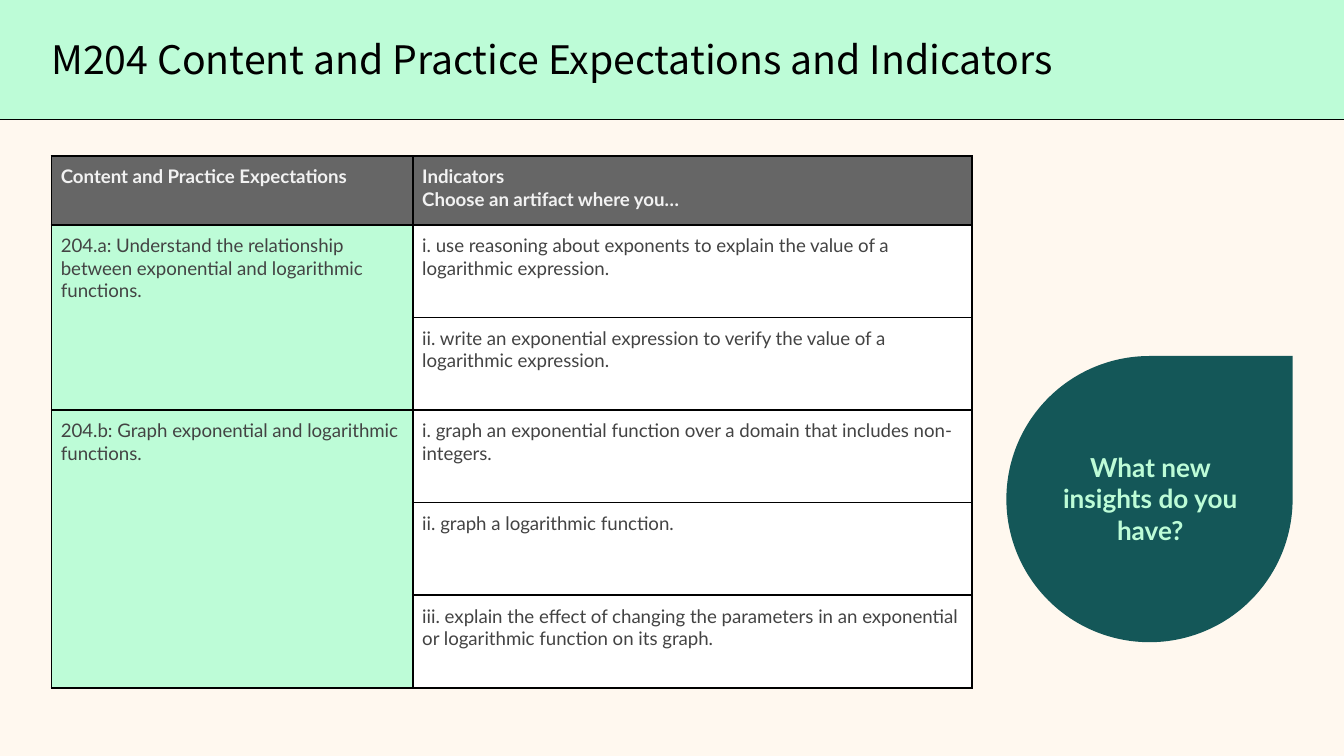
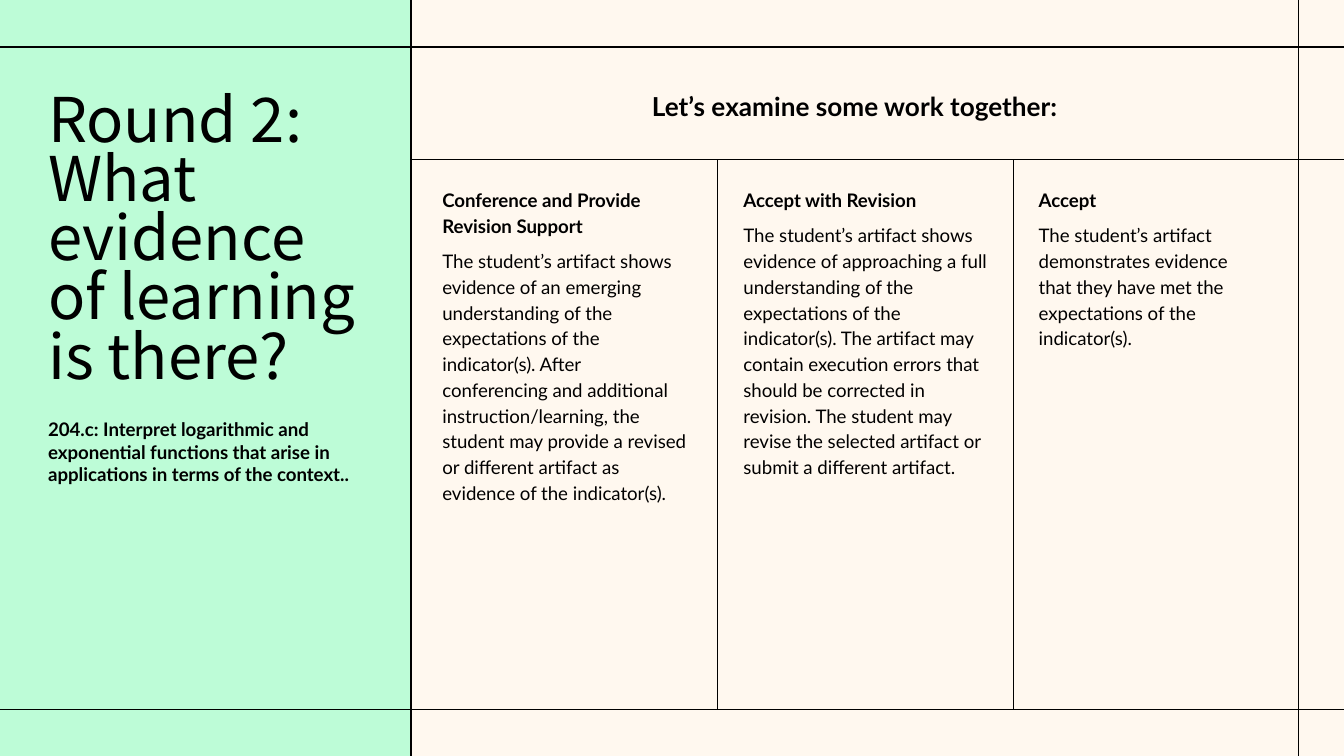
from lxml.etree import SubElement
from pptx import Presentation
from pptx.dml.color import RGBColor
from pptx.enum.shapes import MSO_CONNECTOR as Link, MSO_SHAPE as Kind
from pptx.enum.text import MSO_ANCHOR as Anchor, MSO_AUTO_SIZE as Fit, PP_ALIGN as Align
from pptx.oxml.ns import qn
from pptx.util import Cm, Pt

# Shared look
WIDTH, HEIGHT = 25.4, 14.29
CREAM, MINT, TEAL = "FFF8EF", "BDFCD7", "145758"
BLACK, WHITE, GREY, DARK, PALE = "000000", "FFFFFF", "666666", "434343", "F2F2F2"
TITLE_FONT, BODY_FONT = "Noto Sans CJK KR", "Lato"
TITLE_ONLY, COMPARISON = 5, 4
CELL_MARGIN = 0.18


def color(value):
    return RGBColor.from_string(value)


def paint(fill, value):
    fill.solid()
    fill.fore_color.rgb = color(value)


def write(frame, text, size=10, font=BODY_FONT, ink=BLACK, bold=False,
          align=Align.LEFT, spacing=1.0, before=0, after=0):
    """Add a paragraph, filling the first one while it is empty."""
    para = frame.paragraphs[0]
    if para.runs:
        para = frame.add_paragraph()
    para.alignment, para.line_spacing = align, spacing
    para.space_before, para.space_after = Pt(before), Pt(after)
    props = para._p.get_or_add_pPr()
    props.set("marL", "0")
    props.set("indent", "0")
    SubElement(props, qn("a:buNone"))
    for index, line in enumerate(text.split("\n")):
        if index:
            para.add_line_break()
        span = para.add_run()
        span.text = line
        span.font.size, span.font.name, span.font.bold = Pt(size), font, bold
        span.font.color.rgb = color(ink)


def prepare(shape, left, top, width, height):
    """Place a text shape without margins and return its frame."""
    shape.left, shape.top = Cm(left), Cm(top)
    shape.width, shape.height = Cm(width), Cm(height)
    frame = shape.text_frame
    frame.margin_left = frame.margin_right = 0
    frame.margin_top = frame.margin_bottom = 0
    frame.word_wrap = True
    frame.auto_size = Fit.SHAPE_TO_FIT_TEXT
    frame.vertical_anchor = Anchor.TOP
    return frame


def add_label(page, box, text, **style):
    lengths = [Cm(length) for length in box]
    write(prepare(page.shapes.add_textbox(*lengths), *box), text, **style)


def add_title(page, box, lines, **style):
    """Fill the title and bring it in front of its panel."""
    title = page.shapes.title
    page.shapes.element.append(title.element)
    frame = prepare(title, *box)
    for line in lines:
        write(frame, line, font=TITLE_FONT, **style)


def add_panel(page, kind, box, fill):
    panel = page.shapes.add_shape(kind, *[Cm(length) for length in box])
    panel.shadow.inherit = False
    paint(panel.fill, fill)
    panel.line.fill.background()


def add_rule(page, x1, y1, x2, y2):
    rule = page.shapes.add_connector(Link.STRAIGHT, Cm(x1), Cm(y1), Cm(x2), Cm(y2))
    rule.line.color.rgb = color(BLACK)
    rule.line.width = Pt(0.75)
    SubElement(rule.element.spPr, qn("a:effectLst"))


# Slide 1: expectations table
EXPECTATIONS = [
    ("204.a: Understand the relationship between exponential and logarithmic functions.", [
        "i. use reasoning about exponents to explain the value of a logarithmic expression.",
        "ii. write an exponential expression to verify the value of a logarithmic expression."]),
    ("204.b: Graph exponential and logarithmic functions.", [
        "i. graph an exponential function over a domain that includes non-integers.",
        "ii. graph a logarithmic function.",
        "iii. explain the effect of changing the parameters in an exponential"
        " or logarithmic function on its graph."]),
]


def style_cell(cell, fill):
    cell.margin_left = cell.margin_right = Cm(CELL_MARGIN)
    cell.margin_top = cell.margin_bottom = Cm(CELL_MARGIN)
    props = cell._tc.get_or_add_tcPr()
    for side in ("lnL", "lnR", "lnT", "lnB"):
        border = SubElement(props, qn(f"a:{side}"), w=str(Pt(1)))
        SubElement(SubElement(border, qn("a:solidFill")), qn("a:srgbClr"), val=BLACK)
    paint(cell.fill, fill)


def add_expectations(page, left, top, columns=(6.83, 10.57), header=1.3, row=1.75):
    count = sum(len(indicators) for _, indicators in EXPECTATIONS)
    table = page.shapes.add_table(count + 1, 2, Cm(left), Cm(top), Cm(sum(columns)),
                                  Cm(header + count * row)).table
    table.first_row = table.horz_banding = False
    for column, width in zip(table.columns, columns):
        column.width = Cm(width)
    for index, line in enumerate(table.rows):
        line.height = Cm(row if index else header)
        for cell, fill in zip(line.cells, (MINT, WHITE)):
            style_cell(cell, fill if index else GREY)

    heading = dict(ink=PALE, bold=True)
    write(table.cell(0, 0).text_frame, "Content and Practice Expectations", **heading)
    for text in ("Indicators", "Choose an artifact where you…"):
        write(table.cell(0, 1).text_frame, text, **heading)

    first = 1
    for expectation, indicators in EXPECTATIONS:
        last = first + len(indicators) - 1
        table.cell(first, 0).merge(table.cell(last, 0))
        write(table.cell(first, 0).text_frame, expectation, ink=DARK)
        for index, indicator in enumerate(indicators, first):
            write(table.cell(index, 1).text_frame, indicator, ink=DARK)
        first = last + 1


def add_question(page, left, top, size):
    add_panel(page, Kind.TEAR, (left, top, size, size), TEAL)
    add_label(page, (left + 0.79, top + 1.8, 3.86, 1.8), "What new insights do you have?",
              size=14, ink=MINT, bold=True, align=Align.CENTER)


def build_expectations_slide(deck, band=2.26, margin=0.97):
    page = deck.slides.add_slide(deck.slide_layouts[TITLE_ONLY])
    add_panel(page, Kind.RECTANGLE, (0, 0, WIDTH, band), MINT)
    add_title(page, (margin, 0.76, 23.67, 0.81),
              ["M204 Content and Practice Expectations and Indicators"],
              size=21, spacing=0.9)
    add_rule(page, WIDTH, band, 0, band)
    add_question(page, 19.02, 6.73, 5.41)
    add_expectations(page, margin, 2.95)


# Slide 2: levels of evidence (left, height, heading, text)
LEVELS = [
    (8.36, 6.5, "Conference and Provide Revision Support",
     "The student’s artifact shows evidence of an emerging understanding of the expectations"
     " of the indicator(s). After conferencing and additional instruction/learning, the student"
     " may provide a revised or different artifact as evidence of the indicator(s)."),
    (14.05, 6.02, "Accept with Revision",
     "The student’s artifact shows evidence of approaching a full understanding of the"
     " expectations of the indicator(s). The artifact may contain execution errors that should"
     " be corrected in revision. The student may revise the selected artifact or submit a"
     " different artifact."),
    (19.63, 3.07, "Accept",
     "The student’s artifact demonstrates evidence \nthat they have met the expectations"
     " of the indicator(s)."),
]


def add_side_panel(page, note, width, top_rule, bottom_rule, margin=0.91):
    inner = 6.02
    add_panel(page, Kind.RECTANGLE, (0, 0, width, HEIGHT), MINT)
    for y in (bottom_rule, top_rule):
        add_rule(page, 0, y, WIDTH, y)
    add_rule(page, width, 0, width, HEIGHT)
    add_title(page, (margin, 1.8, inner, 5.64),
              ["Round 2:", "What evidence of learning is there?"], size=33, spacing=0.8)
    page.shapes.element.append(note.element)
    write(prepare(note, margin, 7.9, inner, 1.7),
          "204.c: Interpret logarithmic and exponential functions that arise in"
          " applications in terms of the context..", bold=True)


def add_levels(page, holders, top, bottom):
    for x in (13.56, 19.15):
        add_rule(page, x, top, x, bottom)
    for holder, (left, height, heading, text) in zip(holders, LEVELS):
        frame = prepare(holder, left, top + 0.49, 4.63, height)
        write(frame, heading, bold=True, spacing=1.15)
        write(frame, text, spacing=1.15, before=5, after=5)


def build_evidence_slide(deck, panel=7.77, top=3.02, bottom=13.41, right=24.54):
    page = deck.slides.add_slide(deck.slide_layouts[COMPARISON])
    note, *holders = [holder for holder in page.placeholders
                      if holder.placeholder_format.idx > 0]
    add_rule(page, 0, top, WIDTH, top)
    add_label(page, (8.66, 1.7, 14.99, 0.61), "Let’s examine some work together:",
              size=14, bold=True, align=Align.CENTER)
    add_rule(page, right, 0, right, HEIGHT)
    add_side_panel(page, note, panel, 0.89, bottom)
    add_levels(page, holders, top, bottom)


def main():
    deck = Presentation()
    deck.slide_width, deck.slide_height = Cm(WIDTH), Cm(HEIGHT)
    paint(deck.slide_master.background.fill, CREAM)
    build_expectations_slide(deck)
    build_evidence_slide(deck)
    deck.save("out.pptx")


if __name__ == "__main__":
    main()
